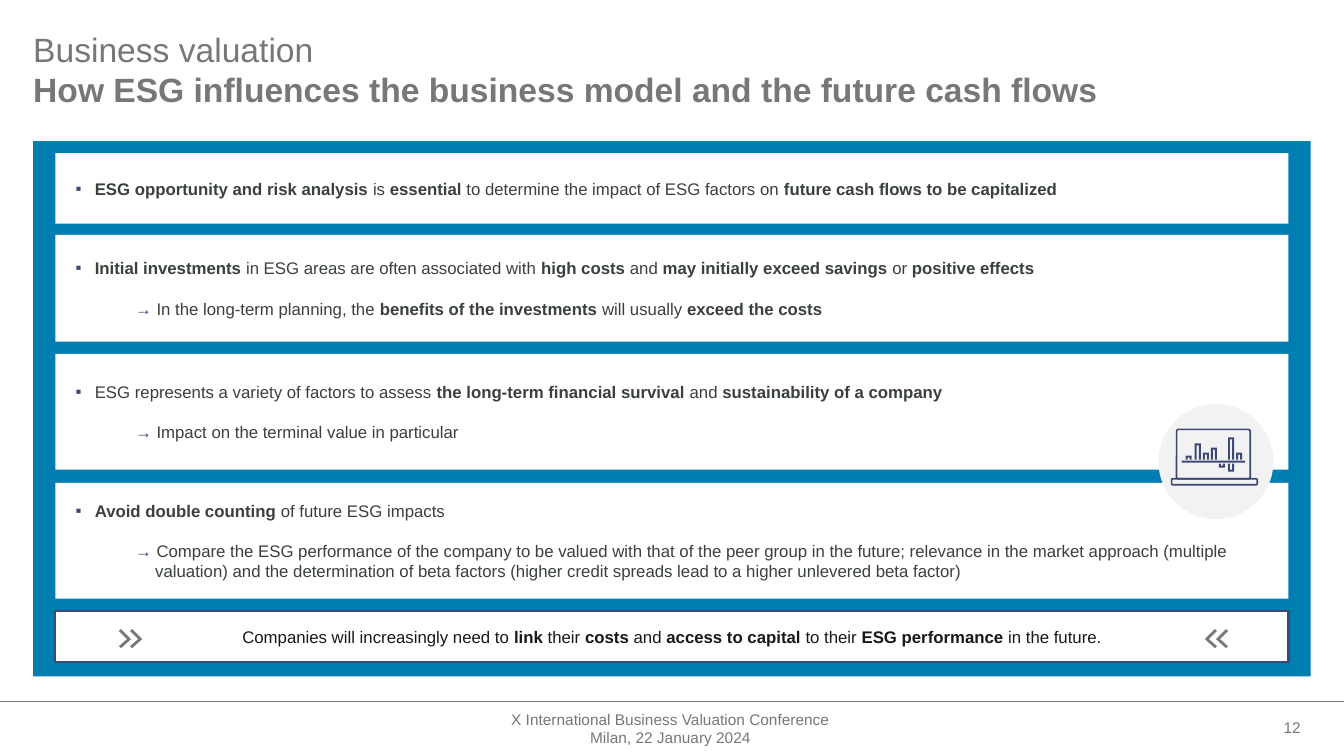
import pptx
import pptx.util
import pptx.dml.color
import pptx.enum.shapes
import pptx.enum.text
import pptx.oxml
import pptx.oxml.ns

Inches = pptx.util.Inches
Kind = pptx.enum.shapes.MSO_SHAPE
Align = pptx.enum.text.PP_ALIGN
Anchor = pptx.enum.text.MSO_ANCHOR

BLUE, NAVY, GREY, DARK, WHITE = "007EB2", "3E4875", "777777", "3A403A", "FFFFFF"
CARDS = [
    (1.52, 0.7, ["*ESG opportunity and risk analysis *is *essential *to determine the impact of "
                 "ESG factors on *future cash flows to be capitalized*"]),
    (2.33, 1.06, ["*Initial investments *in ESG areas are often associated with *high costs *and "
                  "*may initially exceed savings *or *positive effects*",
                  "In the long-term planning, the *benefits of the investments *will usually "
                  "*exceed the costs*"]),
    (3.51, 1.15, ["ESG represents a variety of factors to assess *the long-term financial survival "
                  "*and *sustainability of a company*",
                  "Impact on the terminal value in particular"]),
    (4.79, 1.15, ["*Avoid double counting *of future ESG impacts",
                  "Compare the ESG performance of the company to be valued with that of the peer "
                  "group in the future; relevance in the market approach (multiple valuation) and "
                  "the determination of beta factors (higher credit spreads lead to a higher "
                  "unlevered beta factor)"]),
]


def tint(code):
    return pptx.dml.color.RGBColor.from_string(code)


def paint(shape, fill=None, line=None, width=1):
    shape.shadow.inherit = False
    if fill:
        shape.fill.solid()
        shape.fill.fore_color.rgb = tint(fill)
    else:
        shape.fill.background()
    if line:
        shape.line.color.rgb = tint(line)
        shape.line.width = pptx.util.Pt(width)
    else:
        shape.line.fill.background()
    return shape


def block(slide, kind, box, **look):
    return paint(slide.shapes.add_shape(kind, *map(Inches, box)), **look)


def trace(slide, left, top, spots, fill):
    spots = [(Inches(left + x), Inches(top + y)) for x, y in spots]
    pen = slide.shapes.build_freeform(*spots[0])
    pen.add_line_segments(spots[1:], close=True)
    return paint(pen.convert_to_shape(), fill)


def setup(frame, side=0.0, ends=0.0, anchor=Anchor.MIDDLE):
    form = {"word_wrap": True, "vertical_anchor": anchor,
            "margin_left": Inches(side), "margin_right": Inches(side),
            "margin_top": Inches(ends), "margin_bottom": Inches(ends)}
    for key, value in form.items():
        setattr(frame, key, value)


def write(para, text, size, color, bold=False):
    form = {"name": "Arial", "size": pptx.util.Pt(size)}
    for spot, piece in enumerate(text.split("*")):
        if piece:
            run = para.add_run()
            run.text = piece
            for key, value in {**form, "bold": bold or spot % 2 == 1}.items():
                setattr(run.font, key, value)
            run.font.color.rgb = tint(color)


def label(slide, box, lines, size, align, **look):
    frame = slide.shapes.add_textbox(*map(Inches, box)).text_frame
    setup(frame, **look)
    for spot, (text, bold) in enumerate(lines):
        para = frame.add_paragraph() if spot else frame.paragraphs[0]
        para.alignment = align
        write(para, text, size, GREY, bold)
    return frame


def indent(para, left, hang, mark=None):
    props = para._p.get_or_add_pPr()
    props.set("marL", str(Inches(left)))
    props.set("indent", str(-Inches(hang)))
    if mark:
        space = pptx.oxml.ns.nsdecls("a")
        for xml in (f'<a:buClr {space}><a:srgbClr val="{NAVY}"/></a:buClr>',
                    f'<a:buFont {space} typeface="Arial"/>',
                    f'<a:buChar {space} char="{mark}"/>'):
            props.append(pptx.oxml.parse_xml(xml))


def head(slide, left, top):
    titles = [("Business valuation", False),
              ("How ESG influences the business model and the future cash flows", True)]
    for row, title in enumerate(titles):
        frame = label(slide, (left, top + 0.4 * row, 12.67, 0.39), [title], 24,
                      Align.LEFT, anchor=Anchor.TOP)
        frame.paragraphs[0].line_spacing = 0.9


def card(slide, box, lines):
    frame = block(slide, Kind.RECTANGLE, box, fill=WHITE).text_frame
    setup(frame, side=0.2)
    for spot, text in enumerate(lines):
        para = frame.add_paragraph() if spot else frame.paragraphs[0]
        para.alignment = Align.LEFT
        if spot:
            para.space_before = pptx.util.Pt(14.5)
            indent(para, 0.79, 0.2)
            write(para, "→ ", 12, NAVY)
        else:
            indent(para, 0.19, 0.19, "▪")
        write(para, text, 12, DARK)


def icon(slide, left, top):
    block(slide, Kind.OVAL, (left, top, 1.14, 1.14), fill="F2F2F2")
    for x, y, wide, high, curve in ((0.18, 0.25, 0.73, 0.49, 0.04),
                                    (0.13, 0.74, 0.85, 0.06, 0.2)):
        part = block(slide, Kind.ROUNDED_RECTANGLE, (left + x, top + y, wide, high),
                     line=NAVY, width=1.2)
        part.adjustments[0] = curve
    block(slide, Kind.RECTANGLE, (left + 0.23, top + 0.56, 0.63, 0.02), fill=NAVY)
    bars = [(0.27, 0.04), (0.36, 0.16), (0.44, 0.07), (0.52, 0.12),
            (0.69, 0.22), (0.77, 0.07), (0.6, -0.04), (0.69, -0.08)]
    for x, high in bars:
        wall = 0.02 if high > 0 else -0.02
        base = 0.55 if high > 0 else 0.59
        spots = [(0, 0), (0, -high), (0.06, -high), (0.06, 0),
                 (0.04, 0), (0.04, wall - high), (0.02, wall - high), (0.02, 0)]
        trace(slide, left + x, top + base, spots, NAVY)


def arrows(slide, left, top, right=True):
    spots = [(0, 0.02), (0.02, 0), (0.12, 0.1), (0.02, 0.19), (0, 0.17), (0.08, 0.1)]
    if not right:
        spots = [(0.12 - x, y) for x, y in spots]
    for step in (0, 0.11):
        trace(slide, left + step, top, spots, GREY)


def banner(slide, left, top, wide, high):
    frame = block(slide, Kind.RECTANGLE, (left, top, wide, high),
                  fill=WHITE, line=NAVY, width=1.5).text_frame
    setup(frame)
    frame.paragraphs[0].alignment = Align.CENTER
    write(frame.paragraphs[0], "Companies will increasingly need to *link* their *costs* and "
          "*access to capital *to their *ESG performance* in the future.", 12, "171917")
    arrows(slide, left + 0.63, top + 0.18)
    arrows(slide, left + wide - 0.83, top + 0.18, False)


def panel(slide, left, top, wide, high):
    block(slide, Kind.RECTANGLE, (left, top, wide, high), fill=BLUE)
    inner, span = left + 0.22, wide - 0.44
    for y, tall, lines in CARDS:
        card(slide, (inner, y, span, tall), lines)
    banner(slide, inner, top + 4.66, span, 0.51)
    icon(slide, left + 11.16, top + 2.61)


def foot(slide, top):
    rule = slide.shapes.add_connector(pptx.enum.shapes.MSO_CONNECTOR.STRAIGHT,
                                      0, Inches(top), Inches(13.33), Inches(top))
    rule.line.color.rgb = tint(GREY)
    rule.line.width = pptx.util.Pt(0.5)
    rule._element.spPr.append(pptx.oxml.parse_xml(
        f'<a:effectLst {pptx.oxml.ns.nsdecls("a")}/>'))
    lines = [("X International Business Valuation Conference", False),
             ("Milan, 22 January 2024", False)]
    label(slide, (4.4, top + 0.11, 4.5, 0.31), lines, 11, Align.CENTER, side=0.1, ends=0.05)
    label(slide, (12.27, top + 0.11, 0.73, 0.3), [("12", False)], 11, Align.RIGHT,
          side=0.1, ends=0.05)


def main():
    deck = pptx.Presentation()
    deck.slide_width, deck.slide_height = Inches(13.33), Inches(7.5)
    slide = deck.slides.add_slide(deck.slide_layouts[6])
    head(slide, 0.33, 0.33)
    panel(slide, 0.33, 1.4, 12.67, 5.31)
    foot(slide, 6.96)
    deck.save("out.pptx")


if __name__ == "__main__":
    main()
